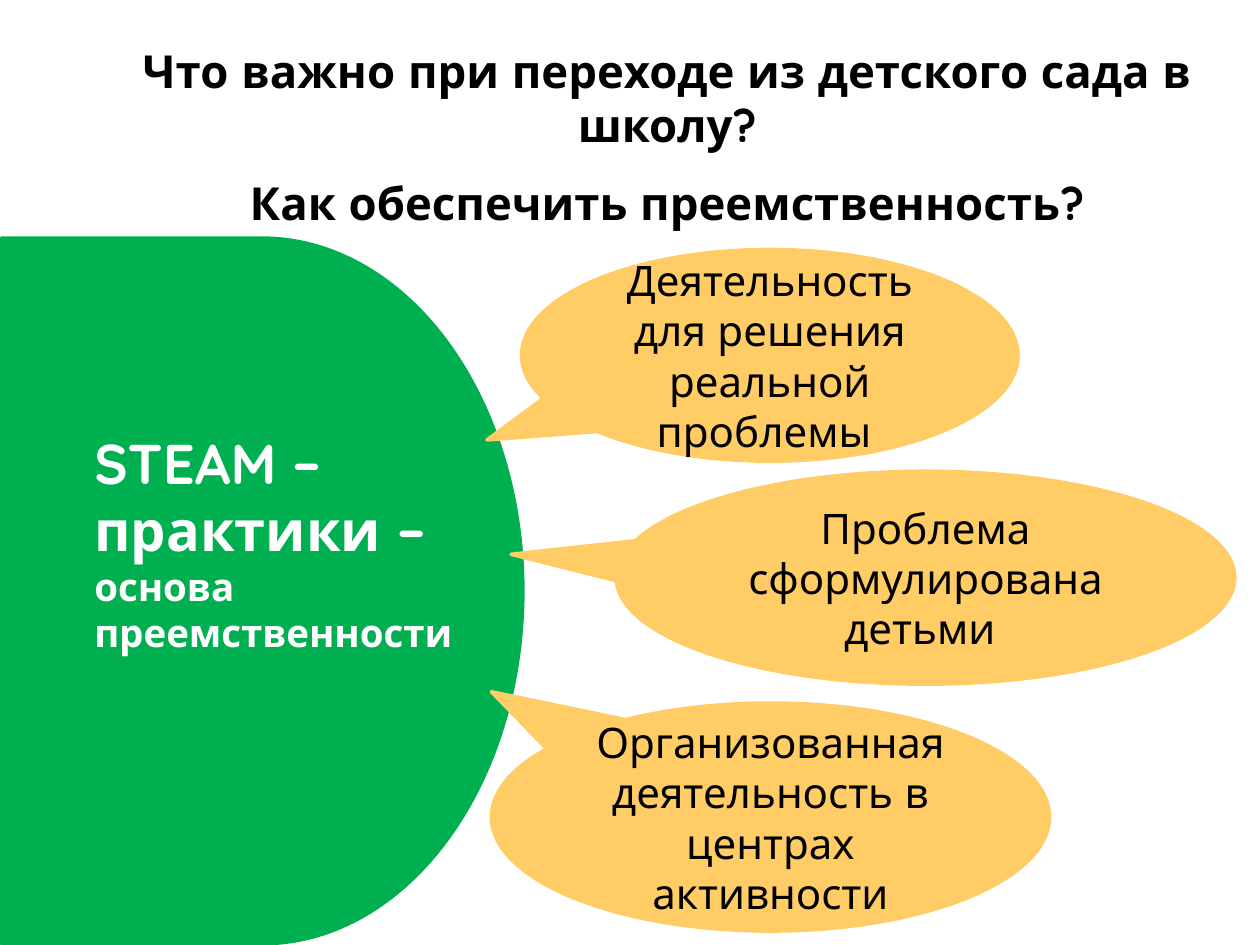
from pptx import Presentation
from pptx.dml.color import RGBColor
from pptx.enum.shapes import MSO_SHAPE
from pptx.enum.text import MSO_ANCHOR, PP_ALIGN
from pptx.util import Inches, Pt

DELAY = MSO_SHAPE.FLOWCHART_DELAY
CALLOUT = MSO_SHAPE.OVAL_CALLOUT
CENTER = PP_ALIGN.CENTER
MIDDLE = MSO_ANCHOR.MIDDLE

GREEN = RGBColor(0x00, 0xB0, 0x50)
AMBER = RGBColor(0xFF, 0xCC, 0x66)
BLACK = RGBColor(0x00, 0x00, 0x00)
WHITE = RGBColor(0xFF, 0xFF, 0xFF)
FONT = "Quicksand"

# Box, pointer adjustments and paragraphs of each callout
CALLOUTS = [
    ((4.89, 3.74, 4.91, 1.69), (-0.67, -0.11),
     ["Проблема сформулирована", "детьми "]),
    ((4.14, 1.98, 3.94, 1.68), (-0.57, 0.4),
     ["Деятельность для решения реальной проблемы "]),
    ((3.9, 5.58, 4.43, 1.81), (-0.5, -0.55),
     ["Организованная деятельность в центрах активности"]),
]


def add_run(p, text, size, color, bold=False):
    r = p.add_run()
    r.text = text
    r.font.color.rgb = color
    formats = {"name": FONT, "size": Pt(size), "bold": bold}
    for name, value in formats.items():
        setattr(r.font, name, value)


def add_centered(tf, lines, size, bold=False):
    for i, line in enumerate(lines):
        p = tf.add_paragraph() if i else tf.paragraphs[0]
        p.alignment = CENTER
        add_run(p, line, size, BLACK, bold)


def add_filled(s, kind, box, color):
    sp = s.shapes.add_shape(kind, *map(Inches, box))
    sp.shadow.inherit = False
    sp.fill.solid()
    sp.fill.fore_color.rgb = color
    sp.line.color.rgb = color
    sp.line.width = Pt(2)
    return sp


def add_textbox(s, box):
    tf = s.shapes.add_textbox(*map(Inches, box)).text_frame
    tf.word_wrap = True
    return tf


def add_callout(s, box, pointer, lines):
    sp = add_filled(s, CALLOUT, box, AMBER)
    for i, value in enumerate(pointer):
        sp.adjustments[i] = value
    tf = sp.text_frame
    tf.word_wrap = True
    tf.vertical_anchor = MIDDLE
    add_centered(tf, lines, 24)


def add_topic(s, box):
    p = add_textbox(s, box).paragraphs[0]
    p.level = 2
    add_run(p, "STEAM – практики – ", 32, WHITE, True)
    add_run(p, "основа преемственности", 22, WHITE, True)


def add_heading(s, box):
    tf = add_textbox(s, box)
    add_centered(tf, ["Что важно при переходе из детского сада в школу?",
                      "Как обеспечить преемственность?"], 26, True)
    tf.paragraphs[1].space_before = Pt(13)


def main():
    prs = Presentation()
    prs.slide_width, prs.slide_height = Inches(10), Inches(7.5)
    s = prs.slides.add_slide(prs.slide_layouts[6])

    # Green panel, callouts, then the texts on top
    add_filled(s, DELAY, (0.01, 1.89, 4.14, 5.6), GREEN)
    for box, pointer, lines in CALLOUTS:
        add_callout(s, box, pointer, lines)
    add_topic(s, (-0.35, 3.35, 4.25, 1.92))
    add_heading(s, (0.59, 0.29, 9.41, 1.62))

    prs.save("out.pptx")


if __name__ == "__main__":
    main()
